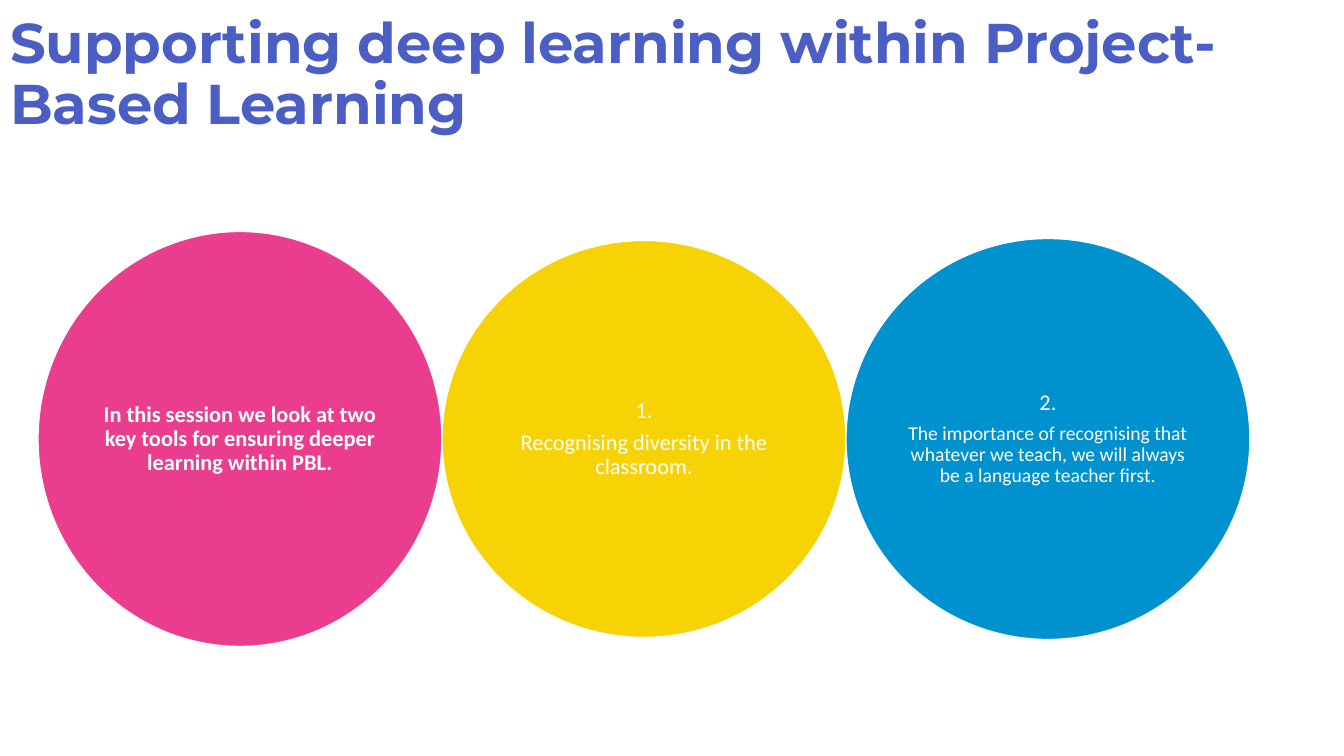
from pptx import Presentation
from pptx.dml.color import RGBColor
from pptx.enum.shapes import MSO_SHAPE
from pptx.enum.text import MSO_ANCHOR, MSO_AUTO_SIZE, PP_ALIGN
from pptx.util import Pt

ELLIPSE = MSO_SHAPE.OVAL
MIDDLE = MSO_ANCHOR.MIDDLE
LEFT, CENTER = PP_ALIGN.LEFT, PP_ALIGN.CENTER
NO_FIT = MSO_AUTO_SIZE.NONE

EMU_PER_PX = 914400 / 100.8
COLORS = {
    "title": "4B5EC4",
    "pink": "EA3D8E",
    "yellow": "F7D205",
    "blue": "0091CF",
    "white": "FFFFFF",
}


def px(n):
    return round(n * EMU_PER_PX)


def rgb(name):
    return RGBColor.from_string(COLORS[name])


def write(p, text, size=16, font="Calibri", color="white", bold=False,
          align=CENTER, before=0):
    p.alignment = align
    p.line_spacing = 0.9
    p.space_before = Pt(before)
    r = p.add_run()
    r.text = text
    r.font.size = Pt(size)
    r.font.name = font
    r.font.bold = bold
    r.font.color.rgb = rgb(color)


class Deck:
    def __init__(self, width, height):
        self.prs = Presentation()
        self.prs.slide_width, self.prs.slide_height = px(width), px(height)
        self.s = self.prs.slides.add_slide(self.prs.slide_layouts[5])

    def title(self, text, x, y, w, h):
        sp = self.s.shapes.title
        sp.left, sp.top, sp.width, sp.height = px(x), px(y), px(w), px(h)
        tf = sp.text_frame
        tf.word_wrap = True
        tf.auto_size = NO_FIT
        tf.vertical_anchor = MIDDLE
        write(tf.paragraphs[0], text, size=40, font="Montserrat",
              color="title", bold=True, align=LEFT)

    def circle(self, x, y, w, h, fill, lines):
        sp = self.s.shapes.add_shape(ELLIPSE, px(x), px(y), px(w), px(h))
        sp.shadow.inherit = False
        sp.fill.solid()
        sp.fill.fore_color.rgb = rgb(fill)
        sp.line.color.rgb = rgb("white")
        sp.line.width = Pt(1)
        tf = sp.text_frame
        tf.word_wrap = True
        tf.vertical_anchor = MIDDLE
        tf.margin_left = tf.margin_right = tf.margin_top = tf.margin_bottom = 0
        for i, (text, style) in enumerate(lines):
            p = tf.add_paragraph() if i else tf.paragraphs[0]
            write(p, text, before=5.6 if i else 0, **style)


def main():
    deck = Deck(1344, 756)

    # Title
    deck.title("Supporting deep learning within Project-Based Learning",
               0, 3, 1325, 146)

    # Row of touching circles, centred on one horizontal axis
    left, width, axis = 38, 404, 439
    circles = [
        (415, "pink", [
            ("In this session we look at two key tools for ensuring deeper "
             "learning within PBL.", {"bold": True})]),
        (397, "yellow", [
            ("1.", {}),
            ("Recognising diversity in the classroom.", {})]),
        (401, "blue", [
            ("2.", {}),
            ("The importance of recognising that whatever we teach, we will "
             "always be a language teacher first.", {"size": 14})]),
    ]
    for i, (height, fill, lines) in enumerate(circles):
        deck.circle(left + i * width, axis - height / 2, width, height,
                    fill, lines)

    deck.prs.save("out.pptx")


if __name__ == "__main__":
    main()
